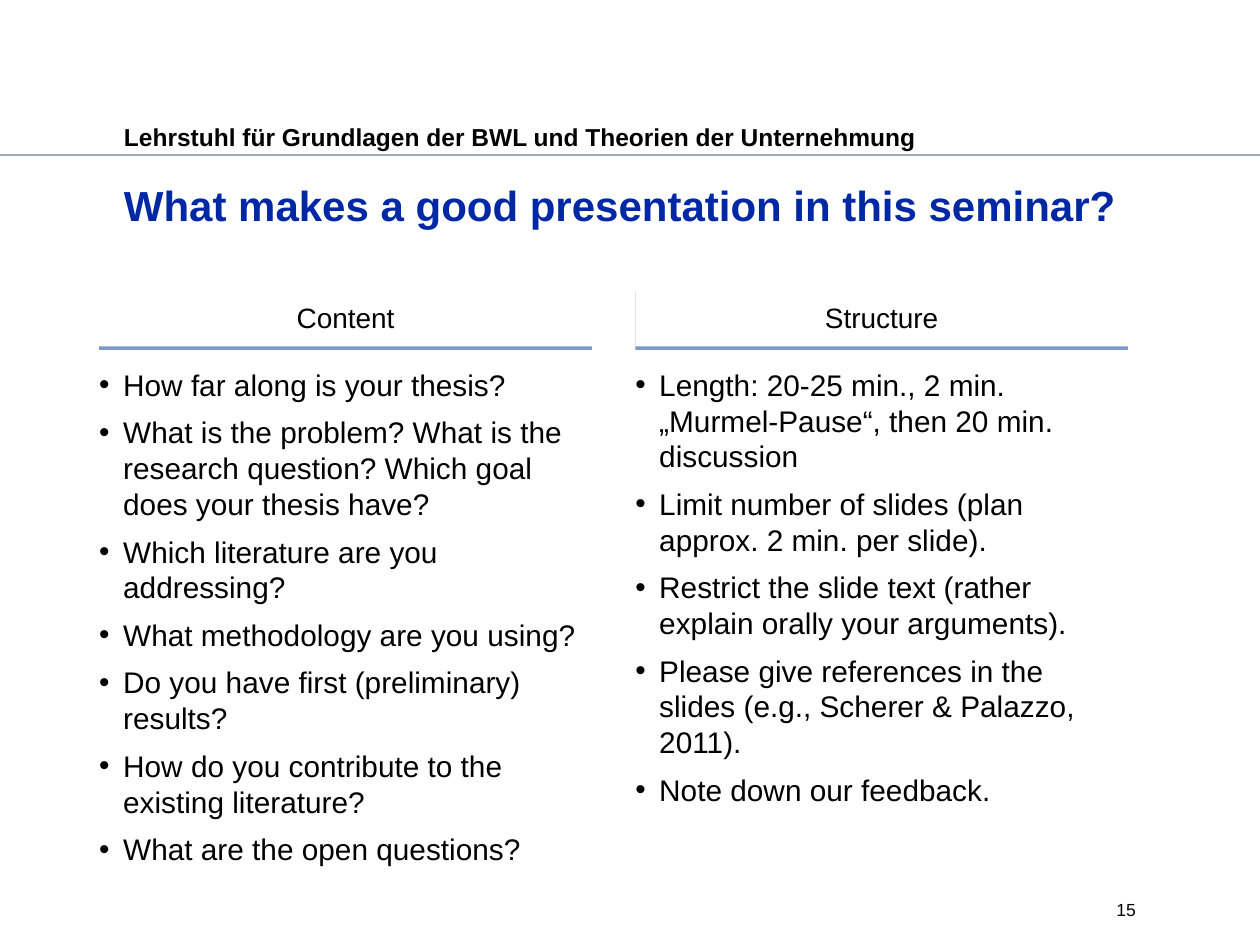
from dataclasses import dataclass

from lxml.etree import SubElement
from pptx import Presentation
from pptx.dml.color import RGBColor
from pptx.enum.shapes import MSO_CONNECTOR, MSO_SHAPE
from pptx.enum.text import MSO_ANCHOR, PP_ALIGN
from pptx.oxml.ns import qn
from pptx.shapes.autoshape import Shape
from pptx.slide import Slide
from pptx.util import Pt

BLACK = RGBColor(0x00, 0x00, 0x00)
WHITE = RGBColor(0xFF, 0xFF, 0xFF)
TITLE_BLUE = RGBColor(0x00, 0x28, 0xA5)
SHADOW_BLUE = RGBColor(0x00, 0x33, 0x99)
RULE_GREY = RGBColor(0xA3, 0xAD, 0xB7)

PAGE_WIDTH, PAGE_HEIGHT = 720, 540
RULE_TOP = 88.56
COLUMN_WIDTH = 281.52
HEADING_TOP, HEADING_HEIGHT = 164.16, 33.84
LIST_TOP = 209.52
BULLET_INDENT = 13.68
LIST_SIZE = 17


@dataclass(frozen=True)
class Frame:
    left: float
    top: float
    width: float
    height: float

    def lengths(self) -> list[Pt]:
        return [Pt(value) for value in (self.left, self.top, self.width, self.height)]


@dataclass(frozen=True)
class Label:
    text: str
    frame: Frame
    size: float
    color: RGBColor = BLACK
    bold: bool = False
    align: PP_ALIGN = PP_ALIGN.LEFT
    inset_top: float = 0


@dataclass(frozen=True)
class Column:
    heading: str
    left: float
    list_height: float
    points: tuple[str, ...]


LABELS = (
    Label("Lehrstuhl für Grundlagen der BWL und Theorien der Unternehmung",
          Frame(70.87, 66.96, 578.16, 18), 14, bold=True, inset_top=2.88),
    Label("What makes a good presentation in this seminar?",
          Frame(70.87, 99.7, 578.16, 64.08), 24, TITLE_BLUE, True, inset_top=2.88),
    Label("15", Frame(586.4, 513.7, 62.64, 17.28), 10, align=PP_ALIGN.RIGHT),
)

COLUMNS = (
    Column("Content", 56.7, 304.56, (
        "How far along is your thesis?",
        "What is the problem? What is the research question? Which goal does your thesis have?",
        "Which literature are you addressing?",
        "What methodology are you using?",
        "Do you have first (preliminary) results?",
        "How do you contribute to the existing literature?",
        "What are the open questions?",
    )),
    Column("Structure", 363, 254.88, (
        "Length: 20-25 min., 2 min. „Murmel-Pause“, then 20 min. discussion",
        "Limit number of slides (plan approx. 2 min. per slide).",
        "Restrict the slide text (rather explain orally your arguments).",
        "Please give references in the slides (e.g., Scherer & Palazzo, 2011).",
        "Note down our feedback.",
    )),
)


def apply_format(target: object, values: dict[str, object]) -> None:
    for name, value in values.items():
        setattr(target, name, value)


def format_frame(box: Shape, top: float = 0, bottom: float = 0,
                 anchor: MSO_ANCHOR = MSO_ANCHOR.TOP) -> None:
    apply_format(box.text_frame, {
        "word_wrap": True, "vertical_anchor": anchor,
        "margin_left": 0, "margin_right": 0,
        "margin_top": Pt(top), "margin_bottom": Pt(bottom),
    })


def write_span(para: object, text: str, size: float,
               color: RGBColor = BLACK, bold: bool = False) -> None:
    span = para.add_run()
    span.text = text
    apply_format(span.font, {"name": "Arial", "size": Pt(size), "bold": bold})
    span.font.color.rgb = color


def draw_label(page: Slide, label: Label) -> None:
    box = page.shapes.add_textbox(*label.frame.lengths())
    format_frame(box, top=label.inset_top)
    para = box.text_frame.paragraphs[0]
    para.alignment = label.align
    write_span(para, label.text, label.size, label.color, label.bold)


def draw_rule(page: Slide) -> None:
    rule = page.shapes.add_connector(
        MSO_CONNECTOR.STRAIGHT, Pt(0), Pt(RULE_TOP), Pt(PAGE_WIDTH), Pt(RULE_TOP))
    rule.line.color.rgb = RULE_GREY
    rule.line.width = Pt(1.25)
    SubElement(rule._element.spPr, qn("a:effectLst"))


def add_bottom_shadow(box: Shape) -> None:
    box.shadow.inherit = False
    effects = box._element.spPr.find(qn("a:effectLst"))
    shadow = SubElement(effects, qn("a:outerShdw"), blurRad="0", dist=str(Pt(2)),
                        dir="5400000", algn="t", rotWithShape="0")
    color = SubElement(shadow, qn("a:srgbClr"), val=str(SHADOW_BLUE))
    SubElement(color, qn("a:alpha"), val="50000")


def draw_heading(page: Slide, column: Column) -> None:
    frame = Frame(column.left, HEADING_TOP, COLUMN_WIDTH, HEADING_HEIGHT)
    box = page.shapes.add_shape(MSO_SHAPE.RECTANGLE, *frame.lengths())
    box.fill.solid()
    box.fill.fore_color.rgb = WHITE
    box.line.fill.background()
    add_bottom_shadow(box)
    format_frame(box, top=7.2, bottom=7.2, anchor=MSO_ANCHOR.BOTTOM)
    para = box.text_frame.paragraphs[0]
    para.alignment = PP_ALIGN.CENTER
    write_span(para, column.heading, 16)


def add_bullet(para: object) -> None:
    properties = para._p.get_or_add_pPr()
    properties.set("marL", str(Pt(BULLET_INDENT)))
    properties.set("indent", str(-Pt(BULLET_INDENT)))
    SubElement(properties, qn("a:buFont"), typeface="Arial")
    SubElement(properties, qn("a:buChar"), char="•")


def draw_points(page: Slide, column: Column) -> None:
    frame = Frame(column.left, LIST_TOP, COLUMN_WIDTH, column.list_height)
    box = page.shapes.add_textbox(*frame.lengths())
    format_frame(box)
    for index, point in enumerate(column.points):
        para = box.text_frame.add_paragraph() if index else box.text_frame.paragraphs[0]
        add_bullet(para)
        apply_format(para, {
            "alignment": PP_ALIGN.LEFT, "line_spacing": 1.0,
            "space_before": Pt(0.4 * LIST_SIZE if index else 0),
        })
        write_span(para, point, LIST_SIZE)


def main() -> None:
    deck = Presentation()
    apply_format(deck, {"slide_width": Pt(PAGE_WIDTH), "slide_height": Pt(PAGE_HEIGHT)})
    page = deck.slides.add_slide(deck.slide_layouts[6])
    draw_rule(page)
    for label in LABELS:
        draw_label(page, label)
    for column in COLUMNS:
        draw_heading(page, column)
        draw_points(page, column)
    deck.save("out.pptx")


if __name__ == "__main__":
    main()
